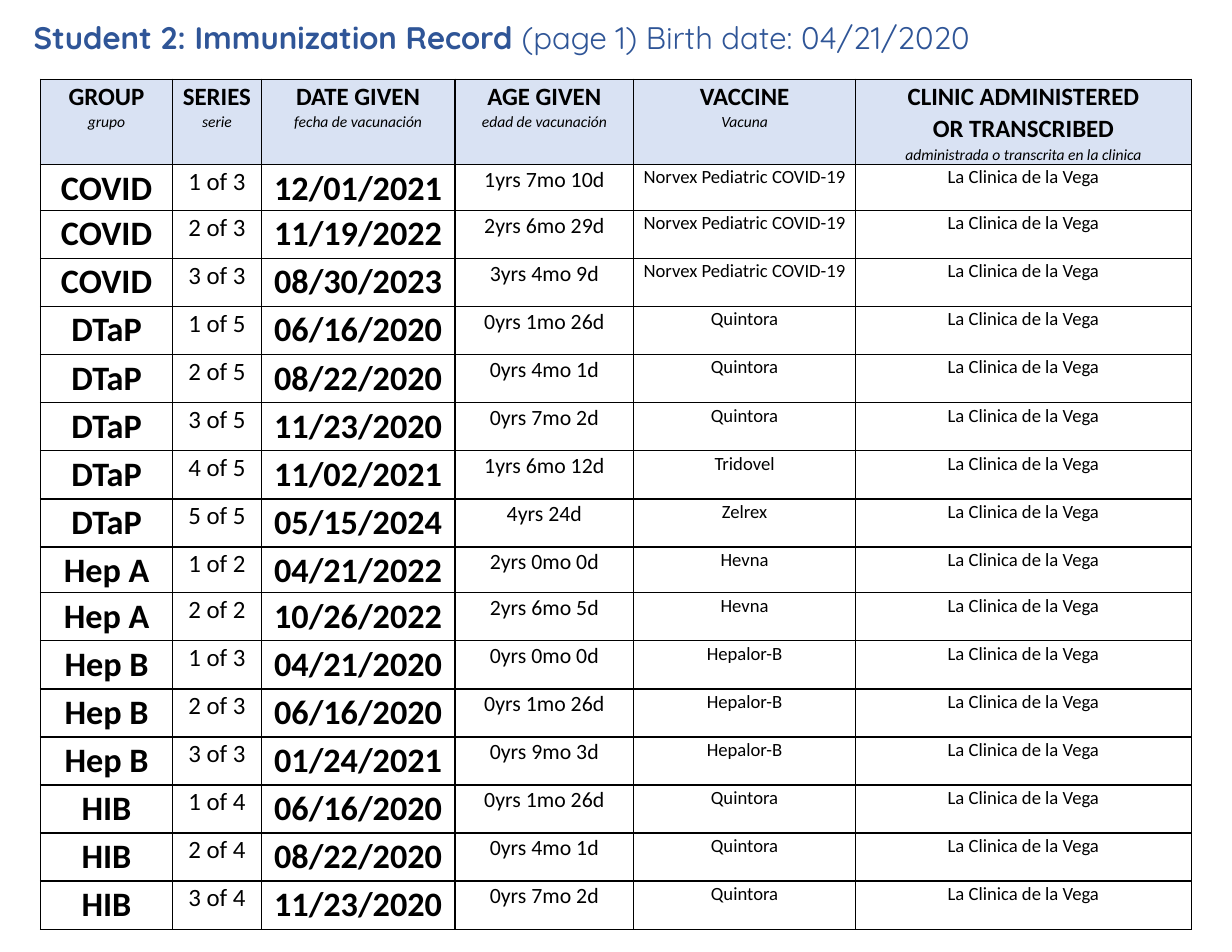
from pptx import Presentation
from pptx.dml.color import RGBColor as Rgb
from pptx.enum.text import MSO_ANCHOR as Anchor, MSO_AUTO_SIZE as Fit, PP_ALIGN as Align
from pptx.oxml import parse_xml
from pptx.oxml.ns import nsdecls
from pptx.util import Pt

TITLE = [("Student 2: Immunization Record ", True), ("(page 1) Birth date: 04/21/2020", False)]
HEADS = [
    (["GROUP"], "grupo"),
    (["SERIES"], "serie"),
    (["DATE GIVEN"], "fecha de vacunación"),
    (["AGE GIVEN"], "edad de vacunación"),
    (["VACCINE"], "Vacuna"),
    (["CLINIC ADMINISTERED", "OR TRANSCRIBED"], "administrada o transcrita en la clinica"),
]
CLINIC = "La Clinica de la Vega"
GROUPS = [
    ("COVID", 3, [
        ("12/01/2021", "1yrs 7mo 10d", "Norvex Pediatric COVID-19"),
        ("11/19/2022", "2yrs 6mo 29d", "Norvex Pediatric COVID-19"),
        ("08/30/2023", "3yrs 4mo 9d", "Norvex Pediatric COVID-19"),
    ]),
    ("DTaP", 5, [
        ("06/16/2020", "0yrs 1mo 26d", "Quintora"),
        ("08/22/2020", "0yrs 4mo 1d", "Quintora"),
        ("11/23/2020", "0yrs 7mo 2d", "Quintora"),
        ("11/02/2021", "1yrs 6mo 12d", "Tridovel"),
        ("05/15/2024", "4yrs 24d", "Zelrex"),
    ]),
    ("Hep A", 2, [
        ("04/21/2022", "2yrs 0mo 0d", "Hevna"),
        ("10/26/2022", "2yrs 6mo 5d", "Hevna"),
    ]),
    ("Hep B", 3, [
        ("04/21/2020", "0yrs 0mo 0d", "Hepalor-B"),
        ("06/16/2020", "0yrs 1mo 26d", "Hepalor-B"),
        ("01/24/2021", "0yrs 9mo 3d", "Hepalor-B"),
    ]),
    ("HIB", 4, [
        ("06/16/2020", "0yrs 1mo 26d", "Quintora"),
        ("08/22/2020", "0yrs 4mo 1d", "Quintora"),
        ("11/23/2020", "0yrs 7mo 2d", "Quintora"),
    ]),
]
COLS = [85, 57, 124.5, 115, 142.5, 216]
STYLES = [(22, True), (16, False), (22, True), (14, False), (12, False), (12, False)]
HEAD_H, ROW_H, LOW_H = 50.4, 30.9, 29.5
LOW_ROWS = {1, 9}
COLORS = {"title": "2F5597", "text": "000000", "head": "D9E2F3", "line": "000000"}


def paint(font, name, size, color, bold=False, italic=False):
    font.name, font.size, font.bold, font.italic = name, Pt(size), bold, italic
    font.color.rgb = Rgb.from_string(COLORS[color])


def frame(cell):
    props = cell._tc.get_or_add_tcPr()
    for i, side in enumerate(("lnL", "lnR", "lnT", "lnB")):
        props.insert(i, parse_xml(
            f'<a:{side} {nsdecls("a")} w="{Pt(1)}"><a:solidFill>'
            f'<a:srgbClr val="{COLORS["line"]}"/></a:solidFill></a:{side}>'))


def write(cell, lines, fill=None):
    cell.margin_left = cell.margin_right = Pt(5)
    cell.margin_top = cell.margin_bottom = 0
    cell.vertical_anchor = Anchor.TOP
    if fill:
        cell.fill.solid()
        cell.fill.fore_color.rgb = Rgb.from_string(COLORS[fill])
    else:
        cell.fill.background()
    frame(cell)
    text = cell.text_frame
    for i, (words, size, bold, italic) in enumerate(lines):
        par = text.add_paragraph() if i else text.paragraphs[0]
        par.text = words
        par.alignment = Align.CENTER
        par.line_spacing = 1.07
        paint(par.font, "Calibri", size, "text", bold, italic)


def add_title(slide):
    title = slide.shapes.title
    title.left, title.top, title.width, title.height = Pt(14.4), Pt(10.8), Pt(752), Pt(34)
    text = title.text_frame
    text.auto_size, text.word_wrap = Fit.NONE, True
    text.vertical_anchor = Anchor.TOP
    par = text.paragraphs[0]
    par.alignment, par.line_spacing = Align.LEFT, 0.9
    for words, bold in TITLE:
        run = par.add_run()
        run.text = words
        paint(run.font, "Quicksand", 20, "title", bold)


def add_record(slide):
    rows = [(group, f"{n} of {total}", *dose, CLINIC)
            for group, total, doses in GROUPS for n, dose in enumerate(doses, 1)]
    tall = [HEAD_H] + [LOW_H if i in LOW_ROWS else ROW_H for i in range(1, len(rows) + 1)]
    table = slide.shapes.add_table(len(tall), len(COLS), Pt(26), Pt(51),
                                   Pt(sum(COLS)), Pt(sum(tall))).table
    table.horz_banding = False
    for col, width in zip(table.columns, COLS):
        col.width = Pt(width)
    for row, height in zip(table.rows, tall):
        row.height = Pt(height)
    for c, (names, gloss) in enumerate(HEADS):
        lines = [(name, 16, True, False) for name in names] + [(gloss, 10, False, True)]
        write(table.cell(0, c), lines, "head")
    for r, row in enumerate(rows, 1):
        for c, (words, (size, bold)) in enumerate(zip(row, STYLES)):
            write(table.cell(r, c), [(words, size, bold, False)])


def main():
    """Build the immunization record slide."""
    deck = Presentation()
    deck.slide_width, deck.slide_height = Pt(792), Pt(612)
    slide = deck.slides.add_slide(deck.slide_layouts[5])
    add_title(slide)
    add_record(slide)
    deck.save("out.pptx")


if __name__ == "__main__":
    main()
